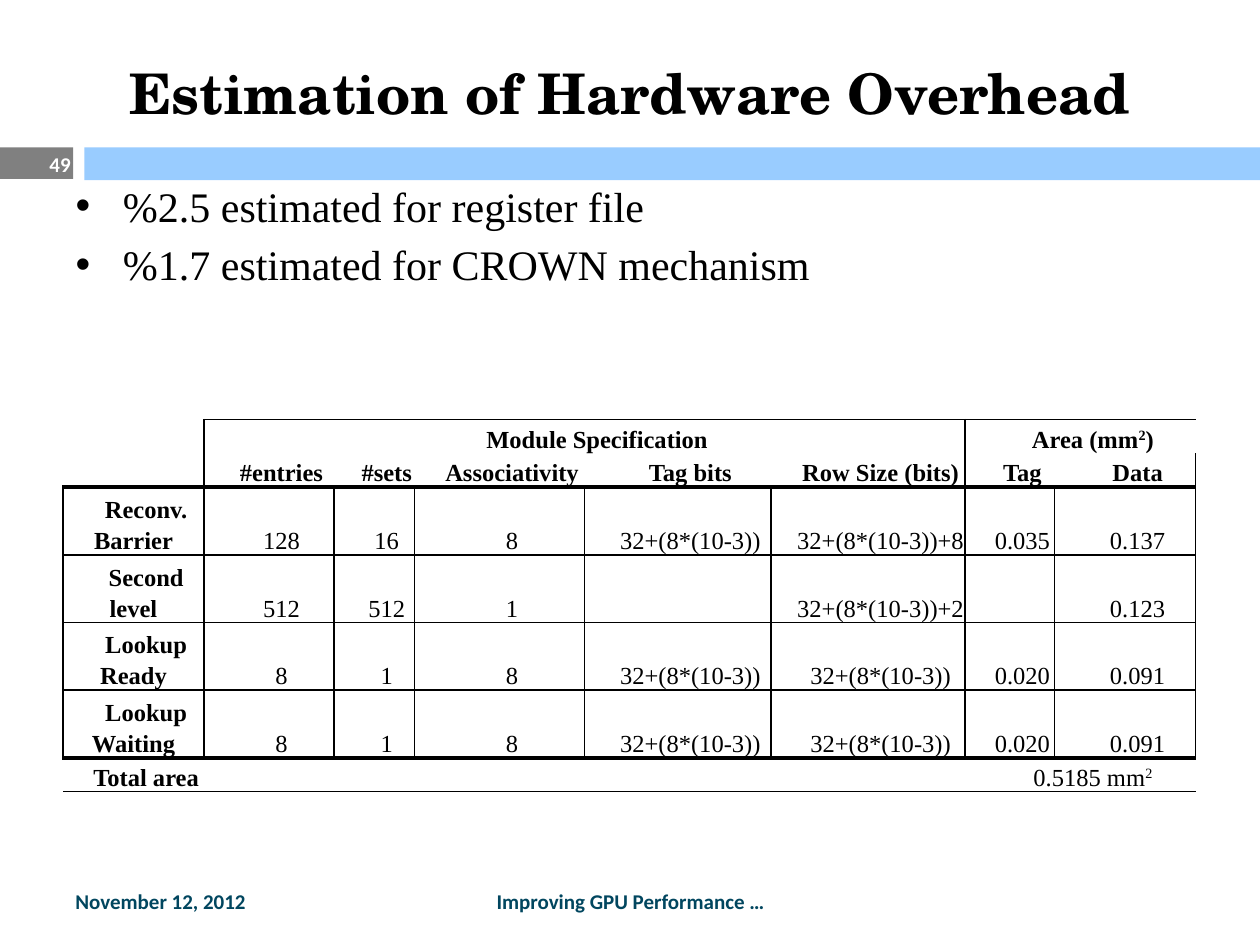
from dataclasses import dataclass

from lxml import etree
from pptx import Presentation
from pptx.dml.color import RGBColor
from pptx.enum import shapes, text
from pptx.oxml.ns import qn
from pptx.util import Emu, Inches, Pt


@dataclass(frozen=True)
class Theme:
    ink: str = "000000"
    white: str = "FFFFFF"
    grey: str = "808080"
    sky: str = "99CCFF"
    footer: str = "01465F"
    display: str = "TeX Gyre Schola"
    serif: str = "Times New Roman"
    sans: str = "Calibri"
    title: int = 32
    body: int = 24
    cell: int = 14
    small: int = 12
    thin: float = 1
    thick: float = 2.5


theme = Theme()
align, anchor = text.PP_ALIGN, text.MSO_ANCHOR

deck = Presentation()
deck.slide_width, deck.slide_height = Inches(10), Inches(7.5)
page = deck.slides.add_slide(deck.slide_layouts[1])


def grid(left, top, width, height):
    """Turn places on a grid of 20 columns by 30 rows into lengths."""
    column, row = deck.slide_width / 20, deck.slide_height / 30
    return [Emu(round(n * unit)) for n, unit in
            ((left, column), (top, row), (width, column), (height, row))]


def style(para, size, face, colour, bold=False):
    for span in para.runs:
        span.font.size, span.font.name, span.font.bold = Pt(size), face, bold
        span.font.color.rgb = RGBColor.from_string(colour)


# Header band
for place, colour in (((0, 4.68, 1.16, 1), theme.grey),
                      ((1.34, 4.68, 18.66, 1.04), theme.sky)):
    band = page.shapes.add_shape(shapes.MSO_SHAPE.RECTANGLE, *grid(*place))
    band.shadow.inherit = False
    band.fill.solid()
    band.fill.fore_color.rgb = RGBColor.from_string(colour)
    band.line.fill.background()

# Title
title = page.shapes.title
title.left, title.top, title.width, title.height = grid(1, 1.2, 18, 3.48)
title.text_frame.text = "Estimation of Hardware Overhead"
title.text_frame.vertical_anchor = anchor.MIDDLE
title.text_frame.paragraphs[0].alignment = align.CENTER
style(title.text_frame.paragraphs[0], theme.title, theme.display, theme.ink, True)

# Bullet list, with bullets and indents from the layout
body = page.placeholders[1]
body.left, body.top, body.width, body.height = grid(1, 5.32, 18, 21.48)
body.text_frame.text = ("%2.5 estimated for register file\n"
                        "%1.7 estimated for CROWN mechanism")
body.text_frame.margin_top = Inches(0.1)
body.text_frame.paragraphs[0].space_before = Pt(0)
for para in body.text_frame.paragraphs:
    style(para, theme.body, theme.serif, theme.ink)

# Page number and footers
for words, place, side, colour in (
        ("49", (0, 4.4, 1.32, 1.6), align.RIGHT, theme.white),
        ("November 12, 2012", (1, 27.8, 4.66, 1.6), align.LEFT, theme.footer),
        ("Improving GPU Performance …", (6.84, 27.8, 6.34, 1.6), align.CENTER,
         theme.footer)):
    box = page.shapes.add_textbox(*grid(*place))
    box.text_frame.word_wrap = True
    box.text_frame.vertical_anchor = anchor.MIDDLE
    box.text_frame.text = words
    box.text_frame.paragraphs[0].alignment = side
    style(box.text_frame.paragraphs[0], theme.small, theme.sans, colour, True)

# Overhead table: "^" marks a raised 2
rows = [
    ["", "Module Specification", "", "", "", "", "Area (mm^)", ""],
    ["", "#entries", "#sets", "Associativity", "Tag bits", "Row Size (bits)",
     "Tag", "Data"],
    ["Reconv. Barrier", "128", "16", "8", "32+(8*(10-3))", "32+(8*(10-3))+8",
     "0.035", "0.137"],
    ["Second level", "512", "512", "1", "", "32+(8*(10-3))+2", "", "0.123"],
    ["Lookup Ready", "8", "1", "8", "32+(8*(10-3))", "32+(8*(10-3))", "0.020",
     "0.091"],
    ["Lookup Waiting", "8", "1", "8", "32+(8*(10-3))", "32+(8*(10-3))",
     "0.020", "0.091"],
    ["Total area", "", "", "", "", "", "0.5185 mm^", ""],
]
widths = [1.12, 1.03, 0.64, 1.35, 1.48, 1.54, 0.71, 1.12]
last = len(rows) - 1
frame = page.shapes.add_table(len(rows), len(widths), *grid(1, 13.32, 18, 5.88))
table = frame.table
table.first_row = table.horz_banding = False
for column, width in zip(table.columns, widths):
    column.width = Inches(width)
for row in table.rows:
    row.height = Inches(0.21)

for r, values in enumerate(rows):
    for c, value in enumerate(values):
        cell = table.cell(r, c)
        cell.margin_left = cell.margin_right = 0
        cell.margin_top = cell.margin_bottom = 0
        cell.vertical_anchor = anchor.BOTTOM

        # Text, with a first-line indent
        para = cell.text_frame.paragraphs[0]
        para.alignment, para.line_spacing = align.CENTER, 1.15
        para._p.get_or_add_pPr().set("indent", str(Inches(0.2)))
        before, mark, after = value.partition("^")
        for piece in (before, "2" if mark else "", after):
            if piece:
                para.add_run().text = piece
        style(para, theme.cell, theme.serif, theme.ink, r < 2 or c == 0)
        if mark:
            para.runs[1]._r.get_or_add_rPr().set("baseline", "30000")
        if not value:
            end = etree.SubElement(para._p, qn("a:endParaRPr"))
            end.set("sz", str(theme.cell * 100))

        # Borders: open heads, a full grid of data, thick rules around the data
        data = 2 <= r < last
        edges = {
            "L": theme.thin if data or (r < 2 and c in (1, 6)) else 0,
            "R": theme.thin if data or (r < 2 and c in (0, 5, 7)) else 0,
            "T": theme.thick if r in (2, last)
            else theme.thin if data or (r == 0 and c) else 0,
            "B": theme.thick if r in (1, last - 1)
            else theme.thin if r > 1 else 0,
        }
        props = cell._tc.get_or_add_tcPr()
        for side, weight in edges.items():
            line = etree.SubElement(props, qn(f"a:ln{side}"), w=str(Pt(weight)))
            if weight:
                fill = etree.SubElement(line, qn("a:solidFill"))
                etree.SubElement(fill, qn("a:srgbClr"), val=theme.ink)
            else:
                etree.SubElement(line, qn("a:noFill"))
        cell.fill.background()

# Joined cells
for r, first, final in ((0, 1, 5), (0, 6, 7), (last, 1, 5), (last, 6, 7)):
    table.cell(r, first).merge(table.cell(r, final))

deck.save("out.pptx")
